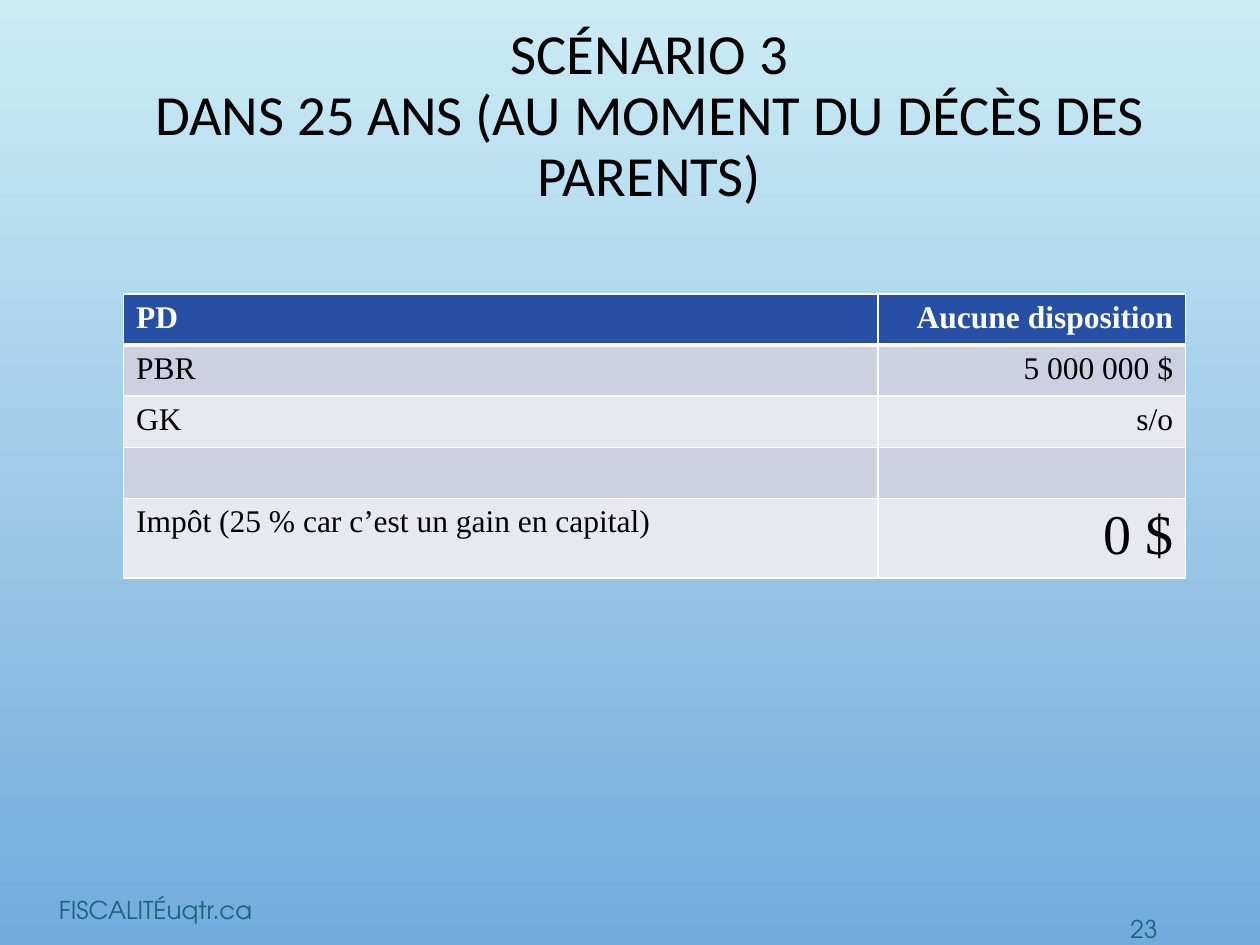
from copy import deepcopy

from lxml.etree import SubElement
from pptx import Presentation
from pptx.dml.color import RGBColor
from pptx.enum.shapes import MSO_SHAPE
from pptx.enum.text import MSO_ANCHOR, MSO_AUTO_SIZE, PP_ALIGN
from pptx.oxml.ns import qn
from pptx.util import Pt

COLORS = {
    "sky": "CBECF5", "blue": "73ABDD", "header": "274FA4", "odd": "CDD0E0",
    "even": "E8E9F0", "white": "FFFFFF", "black": "000000", "teal": "1C647B",
}
TITLE_FONT, TABLE_FONT, FOOTER_FONT = "Calibri", "Times New Roman", "TeX Gyre Adventor"


def rgb(name):
    return RGBColor.from_string(COLORS[name])


def write(tf, text, font, size, color, align=PP_ALIGN.LEFT, bold=False, anchor=None):
    """Fill the first paragraph; a vertical tab in the text is a line break."""
    p = tf.paragraphs[0]
    p.text = text
    p.alignment = align
    for r in p.runs or [p.add_run()]:
        r.font.name, r.font.size, r.font.bold = font, Pt(size), bold
        r.font.color.rgb = rgb(color)
    for br in p._p.findall(qn("a:br")):
        br.append(deepcopy(p.runs[0]._r.rPr))
    if anchor is not None:
        tf.vertical_anchor = anchor
    return p


prs = Presentation()
prs.slide_width, prs.slide_height = Pt(720), Pt(540)
s = prs.slides.add_slide(prs.slide_layouts[5])

# Background
bg = s.background.fill
bg.gradient()
bg.gradient_angle = 270
for stop, name, position in zip(bg.gradient_stops, ("sky", "blue"), (0, 1)):
    stop.color.rgb = rgb(name)
    stop.position = position

# Title
title = s.shapes.title
title.left, title.top, title.width, title.height = Pt(64.8), Pt(20.2), Pt(612.7), Pt(93.6)
title.text_frame.word_wrap = True
title.text_frame.auto_size = MSO_AUTO_SIZE.NONE
p = write(title.text_frame, "SCÉNARIO 3\vDANS 25 ANS (AU MOMENT DU DÉCÈS DES PARENTS)",
          TITLE_FONT, 32.4, "black", PP_ALIGN.CENTER, anchor=MSO_ANCHOR.MIDDLE)
p.line_spacing = 0.9

# Table
rows = [
    ("PD", "Aucune disposition"),
    ("PBR", "5 000 000 $"),
    ("GK", "s/o"),
    ("", ""),
    ("Impôt (25 % car c’est un gain en capital)", "0 $"),
]
col_widths = [431.2, 175.8]
row_heights = [29.2] * 4 + [45.5]
table = s.shapes.add_table(len(rows), 2, Pt(70.6), Pt(168), Pt(sum(col_widths)),
                           Pt(sum(row_heights))).table
for col, width in zip(table.columns, col_widths):
    col.width = Pt(width)
for row, height in zip(table.rows, row_heights):
    row.height = Pt(height)

for i, texts in enumerate(rows):
    header = i == 0
    fill = "header" if header else ("odd" if i % 2 else "even")
    for j, text in enumerate(texts):
        cell = table.cell(i, j)
        write(cell.text_frame, text, TABLE_FONT, 32 if text == "0 $" else 18,
              "white" if header else "black",
              PP_ALIGN.RIGHT if j else PP_ALIGN.LEFT, bold=header)
        tcPr = cell._tc.get_or_add_tcPr()
        for side in "LRTB":
            thick = (header and side == "B") or (i == 1 and side == "T")
            ln = SubElement(tcPr, qn(f"a:ln{side}"), w=str(Pt(3 if thick else 1)))
            line_fill = SubElement(ln, qn("a:solidFill"))
            SubElement(line_fill, qn("a:srgbClr"), val=COLORS["white"])
        cell.fill.solid()
        cell.fill.fore_color.rgb = rgb(fill)

# Footer and slide number
footer = s.shapes.add_textbox(Pt(26.6), Pt(505.4), Pt(427), Pt(28.8))
footer.text_frame.word_wrap = True
write(footer.text_frame, "FISCALITÉuqtr.ca", FOOTER_FONT, 14, "teal",
      anchor=MSO_ANCHOR.MIDDLE)

number = s.shapes.add_shape(MSO_SHAPE.OVAL, Pt(639.4), Pt(516.2), Pt(28.8), Pt(28.8))
number.shadow.inherit = False
number.fill.background()
number.line.fill.background()
tf = number.text_frame
tf.word_wrap = False
tf.margin_left = tf.margin_right = Pt(1.4)
write(tf, "23", FOOTER_FONT, 14, "teal", PP_ALIGN.CENTER, anchor=MSO_ANCHOR.MIDDLE)

prs.save("out.pptx")
